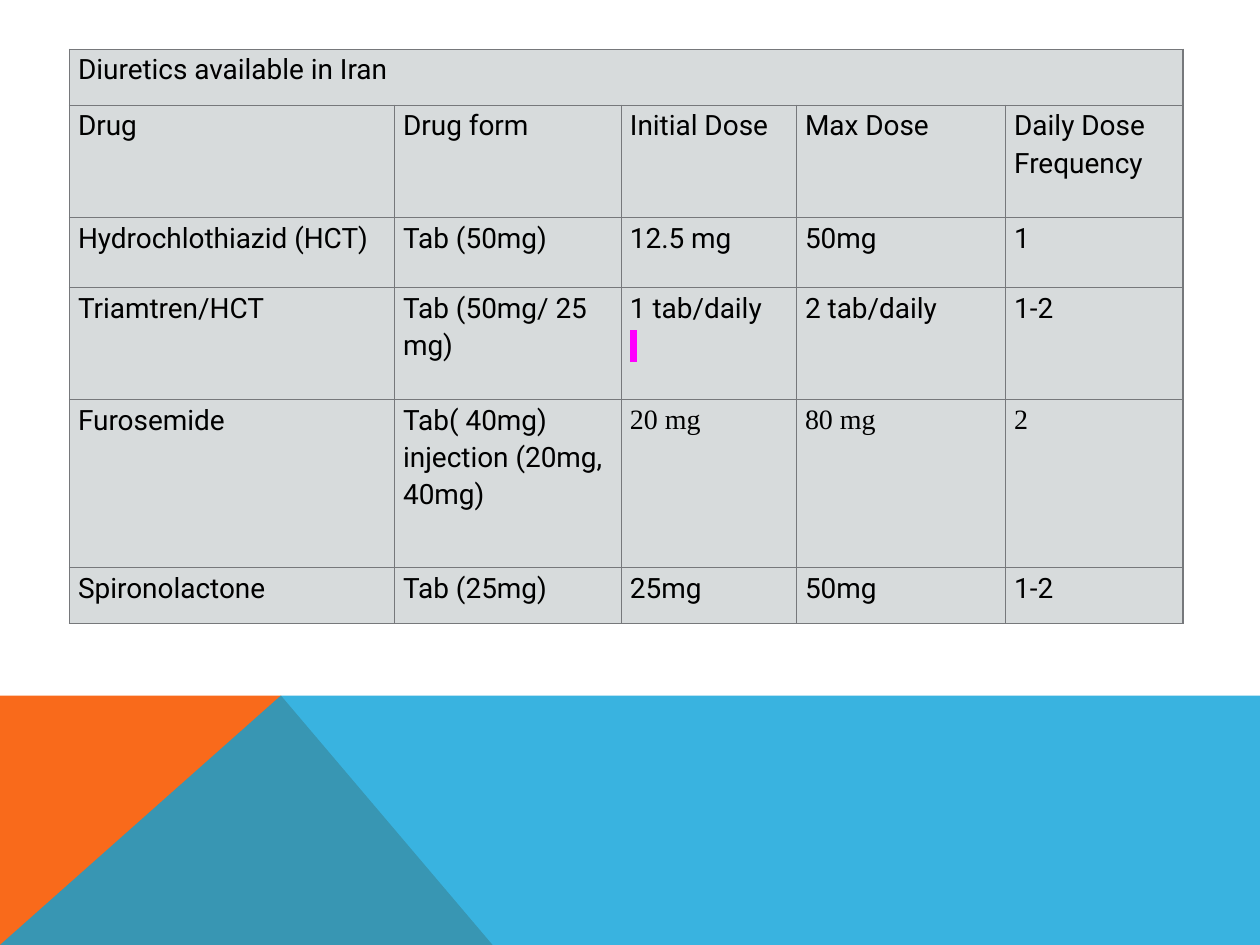
from dataclasses import dataclass

from lxml.etree import SubElement
from pptx import Presentation
from pptx.dml.color import RGBColor as RGB
from pptx.oxml.ns import qn
from pptx.util import Inches, Pt

HEADING = "Diuretics available in Iran"
ROWS = [
    ["Drug", "Drug form", "Initial Dose", "Max Dose", "Daily Dose Frequency"],
    ["Hydrochlothiazid (HCT)", "Tab (50mg)", "12.5 mg", "50mg", "1"],
    ["Triamtren/HCT", "Tab (50mg/ 25 mg)", "1 tab/daily\n ", "2 tab/daily", "1-2"],
    ["Furosemide", "Tab( 40mg) injection (20mg, 40mg)", "20 mg", "80 mg", "2"],
    ["Spironolactone", "Tab (25mg)", "25mg", "50mg", "1-2"],
]
SERIF_CELLS = {(4, 2), (4, 3), (4, 4)}
COLUMN_WIDTHS = [2.58, 1.8, 1.39, 1.66, 1.41]
LINE_HEIGHT = 0.445
ROW_LINES = [1, 2, 1.25, 2, 3, 1]
TABLE_LEFT, TABLE_TOP = 0.55, 0.39

WIDTH, HEIGHT = 10, 7.5
BAND_TOP, PEAK, FOOT = 5.52, 2.23, 3.91


@dataclass(frozen=True)
class Theme:
    orange: str = "F96A1B"
    blue: str = "08A1D9"
    blue_opacity: int = 80
    cell: str = "D7DBDC"
    border: str = "76787B"
    border_width: float = 0.75
    text: str = "000000"
    marker: str = "FF00FF"
    sans: str = "Roboto"
    serif: str = "Times New Roman"
    size: int = 16
    spacing: float = 1.15


THEME = Theme()


def add_color(parent, color):
    fill = SubElement(parent, qn("a:solidFill"))
    SubElement(fill, qn("a:srgbClr"), val=color)


def add_band(slide, points, color, opacity=100):
    start, *rest = [(Inches(x), Inches(y)) for x, y in points]
    builder = slide.shapes.build_freeform(*start)
    builder.add_line_segments(rest, close=True)
    band = builder.convert_to_shape()
    band.shadow.inherit = False
    band.line.fill.background()
    band.fill.solid()
    band.fill.fore_color.rgb = RGB.from_string(color)
    if opacity < 100:
        tint = band.fill._xPr.find(".//" + qn("a:srgbClr"))
        SubElement(tint, qn("a:alpha"), val=str(opacity * 1000))


def draw_borders(cell):
    properties = cell._tc.get_or_add_tcPr()
    for position, side in enumerate(("a:lnL", "a:lnR", "a:lnT", "a:lnB")):
        edge = SubElement(properties, qn(side), w=str(Pt(THEME.border_width)))
        add_color(edge, THEME.border)
        properties.insert(position, edge)


def highlight(run):
    properties = run._r.get_or_add_rPr()
    marker = SubElement(properties, qn("a:highlight"))
    SubElement(marker, qn("a:srgbClr"), val=THEME.marker)


def style_cell(cell, text, typeface):
    cell.margin_left = cell.margin_right = Inches(0.07)
    cell.margin_top = cell.margin_bottom = 0
    cell.fill.solid()
    cell.fill.fore_color.rgb = RGB.from_string(THEME.cell)
    draw_borders(cell)
    cell.text = text
    for paragraph in cell.text_frame.paragraphs:
        paragraph.line_spacing = THEME.spacing
        paragraph.font.size = Pt(THEME.size)
        paragraph.font.name = typeface
        paragraph.font.color.rgb = RGB.from_string(THEME.text)
        for run in paragraph.runs:
            if run.text.isspace():
                highlight(run)


def add_drug_table(slide):
    row_heights = [lines * LINE_HEIGHT for lines in ROW_LINES]
    frame = slide.shapes.add_table(
        len(row_heights), len(COLUMN_WIDTHS), Inches(TABLE_LEFT), Inches(TABLE_TOP),
        Inches(sum(COLUMN_WIDTHS)), Inches(sum(row_heights)))
    table = frame.table
    table.first_row = table.horz_banding = False
    for column, width in zip(table.columns, COLUMN_WIDTHS):
        column.width = Inches(width)
    for row, height in zip(table.rows, row_heights):
        row.height = Inches(height)
    table.cell(0, 0).merge(table.cell(0, len(COLUMN_WIDTHS) - 1))
    heading_row = [HEADING] + [""] * (len(COLUMN_WIDTHS) - 1)
    for r, texts in enumerate([heading_row] + ROWS):
        for c, text in enumerate(texts):
            typeface = THEME.serif if (r, c) in SERIF_CELLS else THEME.sans
            style_cell(table.cell(r, c), text, typeface)


def main():
    deck = Presentation()
    deck.slide_width, deck.slide_height = Inches(WIDTH), Inches(HEIGHT)
    slide = deck.slides.add_slide(deck.slide_layouts[6])
    add_band(slide, [(0, HEIGHT), (0, BAND_TOP), (PEAK, BAND_TOP), (FOOT, HEIGHT)],
             THEME.orange)
    add_band(slide, [(0, HEIGHT), (PEAK, BAND_TOP), (WIDTH, BAND_TOP), (WIDTH, HEIGHT)],
             THEME.blue, THEME.blue_opacity)
    add_drug_table(slide)
    deck.save("out.pptx")


if __name__ == "__main__":
    main()
